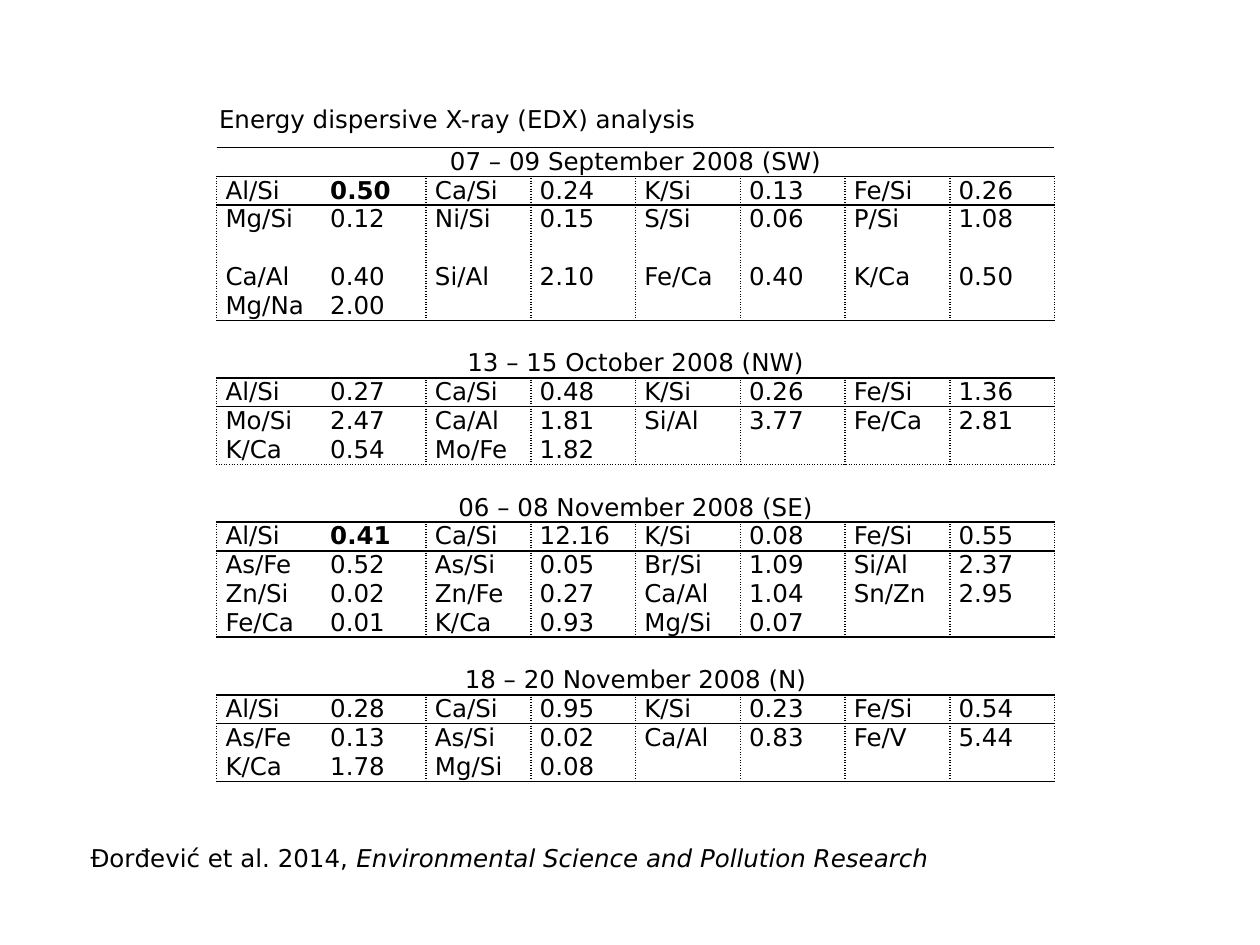
from lxml import etree
from pptx import Presentation, util as u
from pptx.dml.color import RGBColor
from pptx.enum import text
from pptx.oxml import ns

BLACK = RGBColor(0, 0, 0)
FONT = {"name": "DejaVu Sans", "size": u.Pt(14)}
PLAIN = "{2D5ABB26-0587-4C30-8999-92F81FD0307C}"
COLS = 8
LEFT, TOP, WIDE, HIGH = 1.72, 1.17, 6.65, 5.03

TITLE = (1.64, 0.78, 4.13, [("Energy dispersive X-ray (EDX) analysis", False)])
CITE = (0.62, 6.64, 6.92, [
    ("Đorđević et al. 2014, ", False),
    ("Environmental Science and Pollution Research", True),
])
BOLD = {"0.50": 1, "0.41": 10}
TALL = "Mg/Si 0.12"
BLOCKS = [
    ("07 – 09 September 2008 (SW)", "solid", [
        "Al/Si 0.50 Ca/Si 0.24 K/Si 0.13 Fe/Si 0.26",
        "Mg/Si 0.12 Ni/Si 0.15 S/Si 0.06 P/Si 1.08",
        "Ca/Al 0.40 Si/Al 2.10 Fe/Ca 0.40 K/Ca 0.50",
        "Mg/Na 2.00",
    ]),
    ("13 – 15 October 2008 (NW)", "sysDot", [
        "Al/Si 0.27 Ca/Si 0.48 K/Si 0.26 Fe/Si 1.36",
        "Mo/Si 2.47 Ca/Al 1.81 Si/Al 3.77 Fe/Ca 2.81",
        "K/Ca 0.54 Mo/Fe 1.82",
    ]),
    ("06 – 08 November 2008 (SE)", "solid", [
        "Al/Si 0.41 Ca/Si 12.16 K/Si 0.08 Fe/Si 0.55",
        "As/Fe 0.52 As/Si 0.05 Br/Si 1.09 Si/Al 2.37",
        "Zn/Si 0.02 Zn/Fe 0.27 Ca/Al 1.04 Sn/Zn 2.95",
        "Fe/Ca 0.01 K/Ca 0.93 Mg/Si 0.07",
    ]),
    ("18 – 20 November 2008 (N)", "solid", [
        "Al/Si 0.28 Ca/Si 0.95 K/Si 0.23 Fe/Si 0.54",
        "As/Fe 0.13 As/Si 0.02 Ca/Al 0.83 Fe/V 5.44",
        "K/Ca 1.78 Mg/Si 0.08",
    ]),
]


def write(para, words, **more):
    run = para.add_run()
    run.text = words
    for key, val in {**FONT, **more}.items():
        setattr(run.font, key, val)
    run.font.color.rgb = BLACK


def label(slide, item):
    left, top, wide, runs = item
    box = slide.shapes.add_textbox(*map(u.Inches, (left, top, wide, 0.34)))
    frame = box.text_frame
    frame.word_wrap = False
    frame.auto_size = text.MSO_AUTO_SIZE.SHAPE_TO_FIT_TEXT
    for words, slant in runs:
        write(frame.paragraphs[0], words, italic=slant)


def edge(cell, lines):
    prop = cell._tc.get_or_add_tcPr()
    sides = [side for side in "LRTB" if side in lines]
    for spot, side in enumerate(sides):
        line = etree.Element(ns.qn("a:ln" + side), w=str(u.Pt(1)))
        fill = etree.SubElement(line, ns.qn("a:solidFill"))
        etree.SubElement(fill, ns.qn("a:srgbClr"), val=str(BLACK))
        etree.SubElement(line, ns.qn("a:prstDash"), val=lines[side])
        prop.insert(spot, line)


def style(cell, lines):
    form = {
        "margin_left": u.Inches(0.07), "margin_right": u.Inches(0.07),
        "margin_top": 0, "margin_bottom": 0,
    }
    for key, val in form.items():
        setattr(cell, key, val)
    cell.fill.background()
    edge(cell, lines)


def blank(cell):
    para = cell.text_frame.paragraphs[0]._p
    end = etree.SubElement(para, ns.qn("a:endParaRPr"), sz="1400")
    etree.SubElement(end, ns.qn("a:latin"), typeface=FONT["name"])


def head(table, row, words, above):
    for col in range(COLS):
        cell = table.cell(row, col)
        style(cell, {"T": above, "B": "solid"})
        if col:
            blank(cell)
    cell = table.cell(row, 0)
    cell.merge(table.cell(row, COLS - 1))
    cell.vertical_anchor = text.MSO_ANCHOR.BOTTOM
    para = cell.text_frame.paragraphs[0]
    para.alignment = text.PP_ALIGN.CENTER
    write(para, words)


def body(table, row, line, ends):
    words = line.split()
    for col in range(COLS):
        cell = table.cell(row, col)
        style(cell, {"R" if col % 2 else "L": "sysDot", **ends})
        if col < len(words):
            mark = BOLD.get(words[col]) == row
            write(cell.text_frame.paragraphs[0], words[col], bold=mark)
        else:
            blank(cell)


def build(slide):
    count = sum(1 + len(lines) for _, _, lines in BLOCKS)
    area = map(u.Inches, (LEFT, TOP, WIDE, HIGH))
    frame = slide.shapes.add_table(count, COLS, *area)
    table = frame.table
    table.first_row = table.horz_banding = False
    table._tbl.tblPr.find(ns.qn("a:tableStyleId")).text = PLAIN
    unit = u.Inches(HIGH) // (count + len(BLOCKS))
    for col in table.columns:
        col.width = u.Inches(WIDE) // COLS
    row, above = 0, "solid"
    for words, below, lines in BLOCKS:
        head(table, row, words, above)
        table.rows[row].height = unit * (2 if row else 1)
        for num, line in enumerate(lines):
            row += 1
            ends = {"T": "solid"} if num == 0 else {}
            if num == len(lines) - 1:
                ends["B"] = below
            body(table, row, line, ends)
            table.rows[row].height = unit * (2 if line.startswith(TALL) else 1)
        row, above = row + 1, below


def main():
    deck = Presentation()
    deck.slide_width, deck.slide_height = u.Inches(10), u.Inches(7.5)
    slide = deck.slides.add_slide(deck.slide_layouts[6])
    build(slide)
    label(slide, CITE)
    label(slide, TITLE)
    deck.save("out.pptx")


if __name__ == "__main__":
    main()
